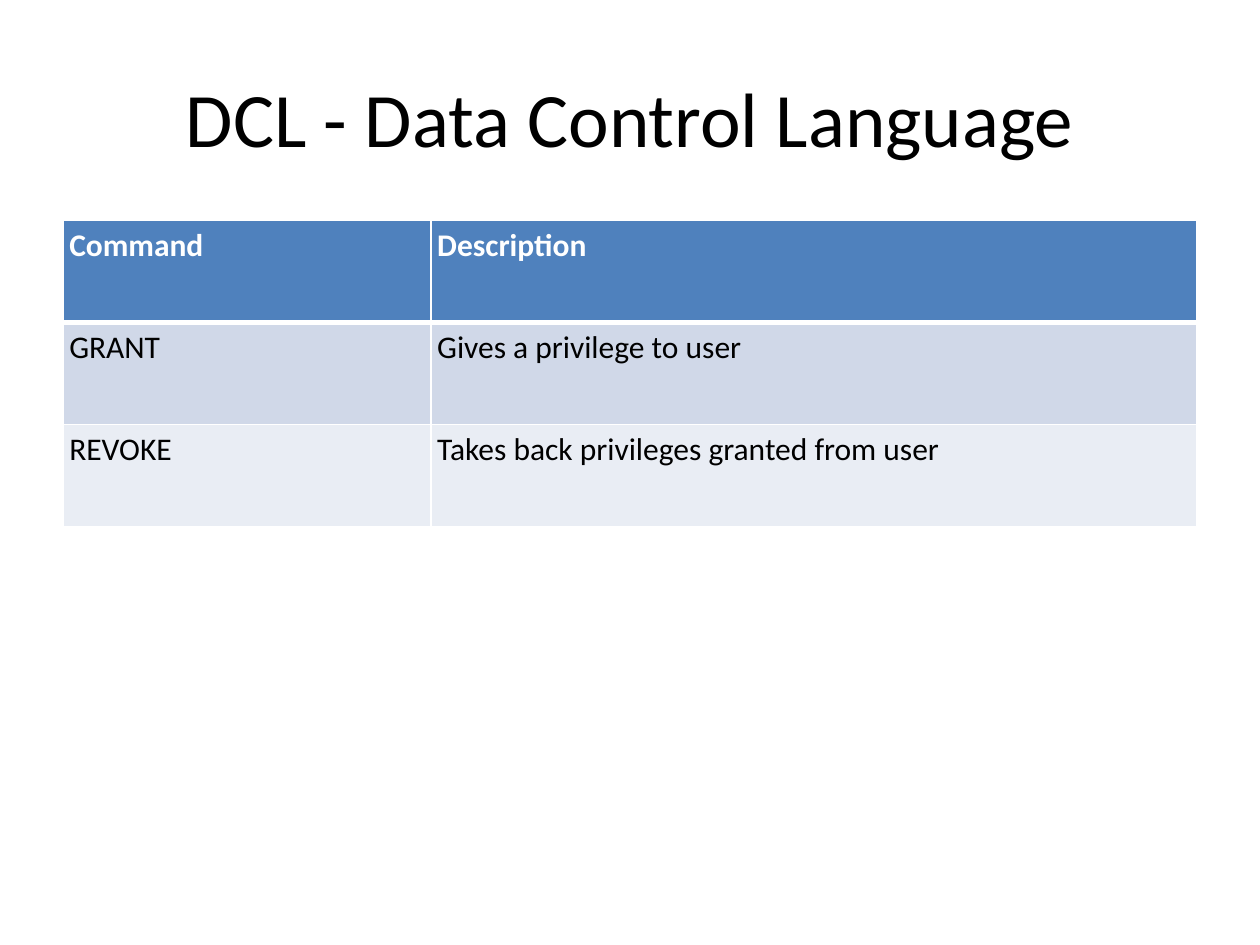
from dataclasses import dataclass

from lxml import etree
from pptx import Presentation
from pptx import util as u
from pptx.dml.color import RGBColor
from pptx.enum import text
from pptx.oxml.ns import qn


@dataclass(frozen=True)
class Theme:
    font: str = "Calibri"
    title_size: int = 44
    table_size: int = 18
    ink: str = "000000"
    paper: str = "FFFFFF"
    header: str = "4F81BD"
    bands: tuple = ("D0D8E8", "E9EDF4")
    thin: int = 1
    thick: int = 3


class SlideBuilder:
    def __init__(self, slide, theme):
        self.slide = slide
        self.theme = theme

    def wording(self, frame, words, size, color, bold=False, align=text.PP_ALIGN.LEFT):
        paragraph = frame.paragraphs[0]
        paragraph.alignment = align
        run = paragraph.add_run()
        run.text = words
        formats = {"name": self.theme.font, "size": u.Pt(size), "bold": bold}
        for name, value in formats.items():
            setattr(run.font, name, value)
        run.font.color.rgb = RGBColor.from_string(color)

    def title(self, words, left, top, width, height):
        box = self.slide.shapes.add_textbox(*map(u.Inches, (left, top, width, height)))
        frame = box.text_frame
        formats = {"word_wrap": True, "vertical_anchor": text.MSO_ANCHOR.MIDDLE}
        for name, value in formats.items():
            setattr(frame, name, value)
        self.wording(frame, words, self.theme.title_size, self.theme.ink,
                     align=text.PP_ALIGN.CENTER)

    def borders(self, cell, widths):
        properties = cell._tc.get_or_add_tcPr()
        for side, width in widths.items():
            line = etree.SubElement(properties, qn(f"a:ln{side}"), w=str(u.Pt(width)))
            fill = etree.SubElement(line, qn("a:solidFill"))
            etree.SubElement(fill, qn("a:srgbClr"), val=self.theme.paper)

    def cell(self, cell, words, row):
        theme = self.theme
        is_header = row == 0
        for side in ("left", "right", "top", "bottom"):
            setattr(cell, f"margin_{side}", u.Inches(0.05))
        # The rule under the header is shared by the first two rows
        self.borders(cell, {
            "L": theme.thin,
            "R": theme.thin,
            "T": theme.thick if row == 1 else theme.thin,
            "B": theme.thick if is_header else theme.thin,
        })
        fill = theme.header if is_header else theme.bands[(row - 1) % 2]
        cell.fill.solid()
        cell.fill.fore_color.rgb = RGBColor.from_string(fill)
        self.wording(cell.text_frame, words, theme.table_size,
                     theme.paper if is_header else theme.ink, bold=is_header)

    def table(self, rows, left, top, column_widths, row_height):
        size = (sum(column_widths), row_height * len(rows))
        table = self.slide.shapes.add_table(
            len(rows), len(column_widths), *map(u.Inches, (left, top, *size))).table
        for column, width in zip(table.columns, column_widths):
            column.width = u.Inches(width)
        for r, row in enumerate(rows):
            table.rows[r].height = u.Inches(row_height)
            for c, words in enumerate(row):
                self.cell(table.cell(r, c), words, r)


def main():
    deck = Presentation()
    deck.slide_width, deck.slide_height = u.Inches(10), u.Inches(7.5)
    builder = SlideBuilder(deck.slides.add_slide(deck.slide_layouts[6]), Theme())

    # Heading
    builder.title("DCL - Data Control Language", 0.5, 0.3, 9, 1.25)

    # Command table
    commands = [
        ("Command", "Description"),
        ("GRANT", "Gives a privilege to user"),
        ("REVOKE", "Takes back privileges granted from user"),
    ]
    builder.table(commands, 0.5, 1.75, (2.92, 6.08), 0.81)

    deck.save("out.pptx")


if __name__ == "__main__":
    main()
